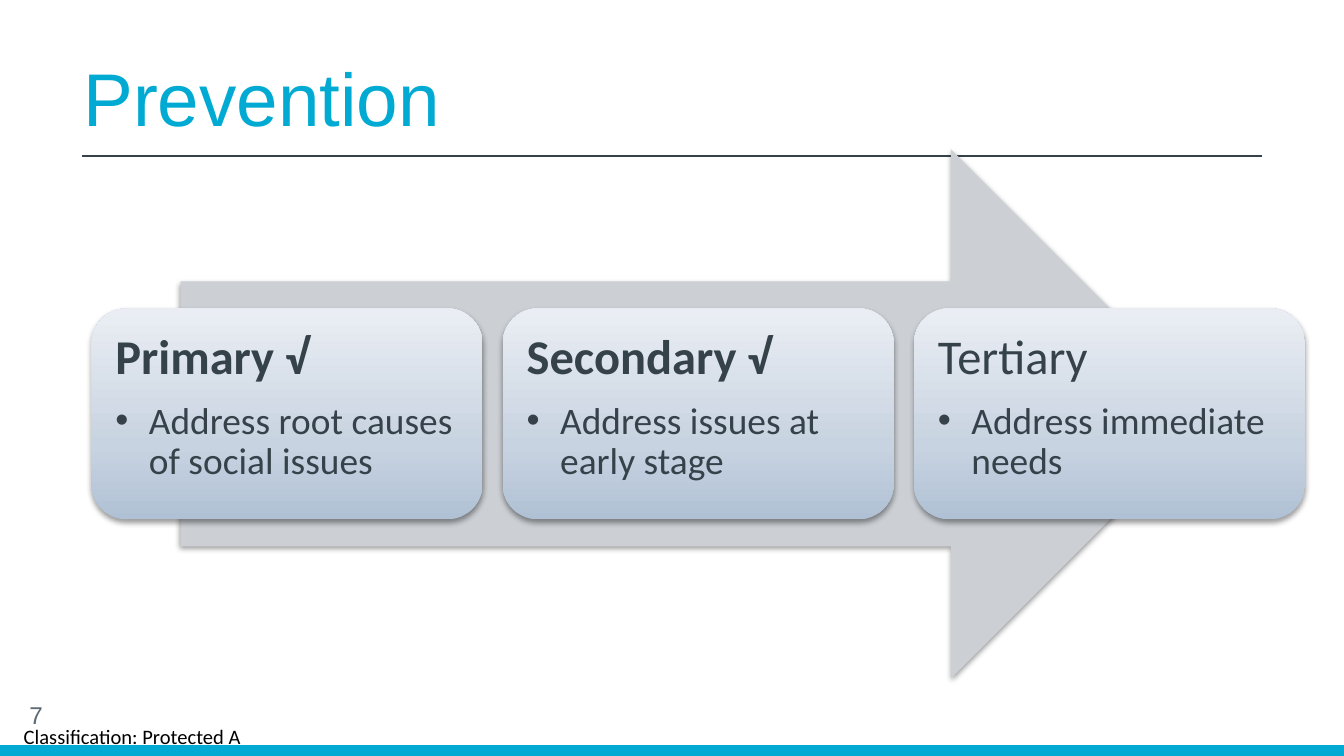
from lxml import etree
from pptx import Presentation
from pptx.dml.color import RGBColor
from pptx.enum.shapes import MSO_CONNECTOR, MSO_SHAPE
from pptx.enum.text import MSO_ANCHOR, PP_ALIGN
from pptx.oxml.ns import qn
from pptx.util import Inches, Pt

SLIDE_W = 10
SLIDE_H = SLIDE_W * 9 / 16
COLORS = {
    "accent": "00AAD2", "ink": "36424A", "muted": "5F6A72", "black": "000000",
    "arrow": "CCD0D5", "low": "B0C1D5", "mid": "C8D3E1", "high": "EAEEF4",
}
CARD_STOPS = [(0, "low"), (35, "mid"), (100, "high")]
STAGES = [
    ("Primary √", True, "Address root causes of social issues"),
    ("Secondary √", True, "Address issues at early stage"),
    ("Tertiary", False, "Address immediate needs"),
]


def color(name):
    return RGBColor.from_string(COLORS[name])


def sub(parent, tag, **attrs):
    return etree.SubElement(parent, qn(tag), {k: str(v) for k, v in attrs.items()})


def add_block(slide, kind, box):
    """Borderless shape with a soft shadow below it."""
    sp = slide.shapes.add_shape(kind, *map(Inches, box))
    sp.line.fill.background()
    sp.shadow.inherit = False
    effects = sp._element.spPr.find(qn("a:effectLst"))
    shadow = sub(effects, "a:outerShdw", blurRad=Pt(3.1), dist=Pt(1.6),
                 dir=5400000, rotWithShape=0)
    sub(sub(shadow, "a:srgbClr", val=COLORS["black"]), "a:alpha", val=38000)
    return sp


def add_box(slide, box, anchor, margins):
    tf = slide.shapes.add_textbox(*map(Inches, box)).text_frame
    tf.word_wrap = True
    tf.vertical_anchor = anchor
    tf.margin_left, tf.margin_top, tf.margin_right, tf.margin_bottom = map(Inches, margins)
    return tf


def add_run(p, text, size, font, name, bold=False):
    r = p.add_run()
    r.text = text
    r.font.size, r.font.name, r.font.bold = Pt(size), font, bold
    r.font.color.rgb = color(name)


def add_title(slide, box, text):
    tf = add_box(slide, box, MSO_ANCHOR.BOTTOM, (0.11, 0.05, 0.1, 0.05))
    add_run(tf.paragraphs[0], text, 40, "Arial", "accent")
    # Rule under the title
    x, y, w, h = box
    rule_y = y + h + 0.06
    line = slide.shapes.add_connector(MSO_CONNECTOR.STRAIGHT, *map(
        Inches, (x + 0.1, rule_y, x + w - 0.11, rule_y)))
    line.line.width = Pt(0.75)
    line.line.color.rgb = color("ink")
    sub(line._element.spPr, "a:effectLst")


def add_card(slide, box, heading, bold, detail):
    sp = add_block(slide, MSO_SHAPE.ROUNDED_RECTANGLE, box)
    sp.fill.gradient()
    sp.fill.gradient_angle = 90
    stops = sp._element.spPr.find(".//" + qn("a:gsLst"))
    for stop in list(stops):
        stops.remove(stop)
    for pos, name in CARD_STOPS:
        sub(sub(stops, "a:gs", pos=pos * 1000), "a:srgbClr", val=COLORS[name])

    # Heading and bullet, inset from the card's rounded corners
    x, y, w, h = box
    inset = 0.08
    tf = add_box(slide, (x + inset, y + inset, w - 2 * inset, h - 2 * inset),
                 MSO_ANCHOR.TOP, [0.1] * 4)
    p = tf.paragraphs[0]
    p.line_spacing, p.space_after = 0.9, Pt(9.1)
    add_run(p, heading, 26, "Calibri", "ink", bold)
    p = tf.add_paragraph()
    p.level = 1
    p.line_spacing, p.space_after = 0.9, Pt(3)
    pPr = p._p.get_or_add_pPr()
    pPr.set("marL", str(Inches(0.25)))
    pPr.set("indent", str(Inches(-0.25)))
    sub(pPr, "a:buFont", typeface="Arial")
    sub(pPr, "a:buChar", char="•")
    add_run(p, detail, 20, "Calibri", "ink")


def add_process(slide, box, stages):
    """Arrow with the stage cards spread over the whole width."""
    x, y, w, h = box
    arrow_w = 7.7
    arrow = add_block(slide, MSO_SHAPE.RIGHT_ARROW,
                      (x + (w - arrow_w) / 2, y, arrow_w, h))
    arrow.fill.solid()
    arrow.fill.fore_color.rgb = color("arrow")
    card_w, card_h = 2.91, 1.57
    step = (w - card_w) / (len(stages) - 1)
    for i, stage in enumerate(stages):
        add_card(slide, (x + i * step, y + (h - card_h) / 2, card_w, card_h), *stage)


def add_footer(slide, box, number, label):
    x, y, w, h = box
    bar_h = 0.08
    bar = slide.shapes.add_shape(MSO_SHAPE.RECTANGLE, *map(
        Inches, (x, y + h - bar_h, w, bar_h)))
    bar.shadow.inherit = False
    bar.fill.solid()
    bar.fill.fore_color.rgb = color("accent")
    bar.line.fill.background()
    # Classification label and page number
    tf = add_box(slide, (x, y + 0.15, 1.97, 0.31), MSO_ANCHOR.MIDDLE, [0] * 4)
    tf.paragraphs[0].alignment = PP_ALIGN.CENTER
    add_run(tf.paragraphs[0], label, 11, "Calibri", "black")
    tf = add_box(slide, (x + 0.12, y, 2.25, 0.3), MSO_ANCHOR.MIDDLE, (0.1, 0.05, 0.1, 0.05))
    add_run(tf.paragraphs[0], number, 13, "Arial", "muted")


def main():
    prs = Presentation()
    prs.slide_width, prs.slide_height = Inches(SLIDE_W), Inches(SLIDE_H)
    s = prs.slides.add_slide(prs.slide_layouts[6])
    add_footer(s, (0, 5.17, SLIDE_W, SLIDE_H - 5.17), "7", "Classification: Protected A")
    add_title(s, (0.51, 0.48, 8.99, 0.62), "Prevention")
    add_process(s, (0.68, 1.11, 9.03, 3.94), STAGES)
    prs.save("out.pptx")


if __name__ == "__main__":
    main()
